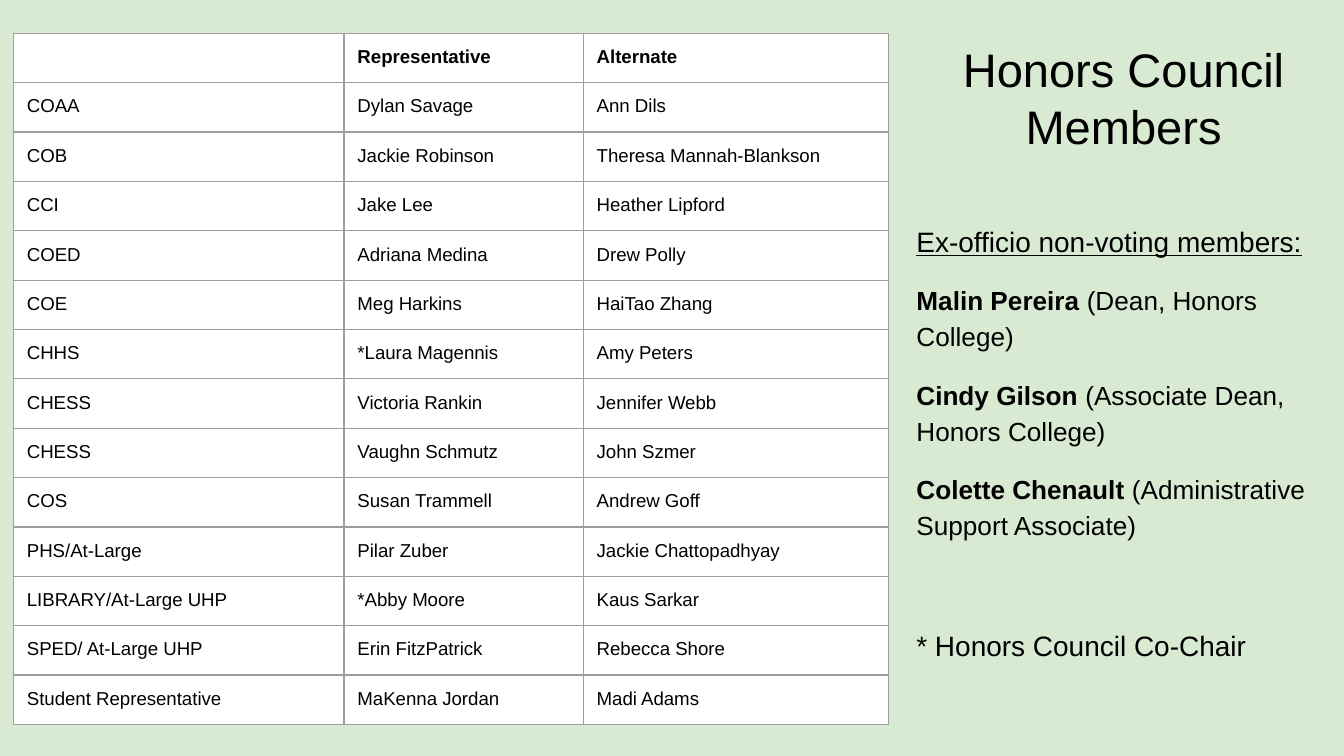
from lxml import etree
from pptx import Presentation, util as u
from pptx.dml.color import RGBColor
from pptx.enum import text
from pptx.oxml.ns import qn

HUE = {"page": "D9EAD3", "cell": "FFFFFF", "rule": "9E9E9E", "ink": "000000"}
WIDE = u.Inches(10)
HIGH = WIDE * 9 // 16
FACE = "Arial"
PAD = u.Inches(0.1)
RULE = u.Pt(0.75)
COLS = (2.46, 1.78, 2.27)

ROWS = [
    ("", "Representative", "Alternate"),
    ("COAA", "Dylan Savage", "Ann Dils"),
    ("COB", "Jackie Robinson", "Theresa Mannah-Blankson"),
    ("CCI", "Jake Lee", "Heather Lipford"),
    ("COED", "Adriana Medina", "Drew Polly"),
    ("COE", "Meg Harkins", "HaiTao Zhang"),
    ("CHHS", "*Laura Magennis", "Amy Peters"),
    ("CHESS", "Victoria Rankin", "Jennifer Webb"),
    ("CHESS", "Vaughn Schmutz", "John Szmer"),
    ("COS", "Susan Trammell", "Andrew Goff"),
    ("PHS/At-Large", "Pilar Zuber", "Jackie Chattopadhyay"),
    ("LIBRARY/At-Large UHP", "*Abby Moore", "Kaus Sarkar"),
    ("SPED/ At-Large UHP", "Erin FitzPatrick", "Rebecca Shore"),
    ("Student Representative", "MaKenna Jordan", "Madi Adams"),
]

STAFF = [
    ("Malin Pereira", " (Dean, Honors College)"),
    ("Cindy Gilson", " (Associate Dean, Honors College)"),
    ("Colette Chenault ", "(Administrative Support Associate)"),
]


def area(left, top, width, height):
    parts = (left * WIDE, top * HIGH, width * WIDE, height * HIGH)
    return [int(part / 100) for part in parts]


def style(item, **vals):
    for name, val in vals.items():
        setattr(item, name, val)


def write(para, words, size, **vals):
    run = para.add_run()
    run.text = words
    style(run.font, name=FACE, size=u.Pt(size), **vals)
    run.font.color.rgb = RGBColor.from_string(HUE["ink"])


def pad(item):
    style(item, margin_left=PAD, margin_right=PAD, margin_top=PAD, margin_bottom=PAD)


def frame(slide, box):
    body = slide.shapes.add_textbox(*box).text_frame
    body.word_wrap = True
    pad(body)
    return body


def edge(cell):
    props = cell._tc.get_or_add_tcPr()
    for side in "LRTB":
        line = etree.SubElement(props, qn(f"a:ln{side}"), w=str(RULE))
        fill = etree.SubElement(line, qn("a:solidFill"))
        etree.SubElement(fill, qn("a:srgbClr"), val=HUE["rule"])


def roster(slide, box):
    width, height = box[2:]
    grid = slide.shapes.add_table(len(ROWS), len(COLS), *box).table
    for col, part in zip(grid.columns, COLS):
        col.width = int(width * part / sum(COLS))
    for i, names in enumerate(ROWS):
        grid.rows[i].height = height // len(ROWS)
        for j, name in enumerate(names):
            cell = grid.cell(i, j)
            pad(cell)
            edge(cell)
            cell.fill.solid()
            cell.fill.fore_color.rgb = RGBColor.from_string(HUE["cell"])
            para = cell.text_frame.paragraphs[0]
            if name:
                write(para, name, 10, bold=i == 0)
            else:
                para._p.get_or_add_endParaRPr().set("sz", "1000")


def title(slide, box):
    para = frame(slide, box).paragraphs[0]
    para.alignment = text.PP_ALIGN.CENTER
    write(para, "Honors Council Members", 25.2)


def panel(slide, box):
    body = frame(slide, box)
    head = body.paragraphs[0]
    write(head, "Ex-officio non-voting members:", 15, underline=True)
    for name, role in STAFF:
        para = body.add_paragraph()
        write(para, name, 14, bold=True)
        write(para, role, 14)
    note = body.add_paragraph()
    write(note, "* Honors Council Co-Chair", 15)
    for para in body.paragraphs:
        style(para, line_spacing=1.15, space_before=u.Pt(12))
    note.space_before = u.Pt(44)


def main():
    deck = Presentation()
    style(deck, slide_width=WIDE, slide_height=HIGH)
    slide = deck.slides.add_slide(deck.slide_layouts[6])
    slide.background.fill.solid()
    slide.background.fill.fore_color.rgb = RGBColor.from_string(HUE["page"])
    title(slide, area(67.2, 3.6, 32.8, 18.5))
    panel(slide, area(67.2, 27.2, 32.8, 72.8))
    roster(slide, area(1, 4.4, 65.1, 91.2))
    deck.save("out.pptx")


if __name__ == "__main__":
    main()
